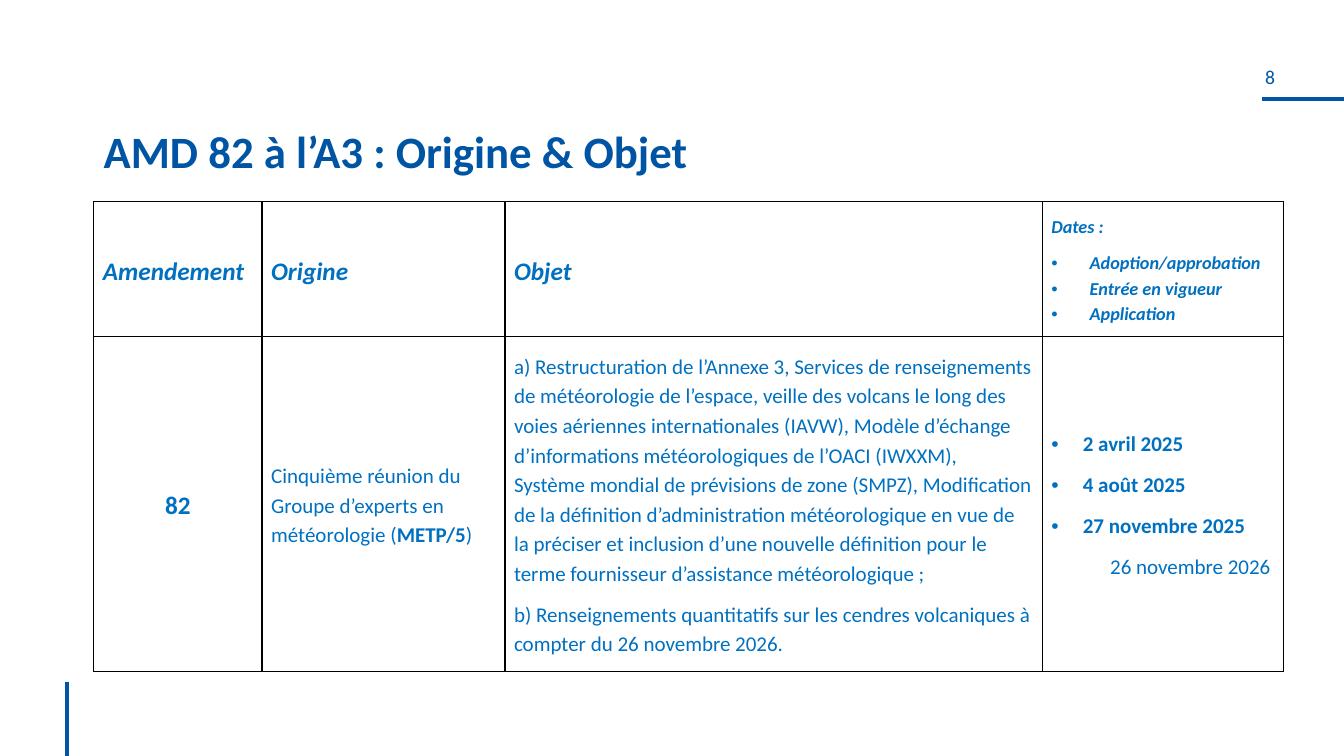
from lxml import etree
from pptx import Presentation
from pptx import util as u
from pptx.dml import color
from pptx.enum import shapes, text
from pptx.oxml import ns

COLORS = {"rule": "0055A5", "title": "0054A4", "table": "0070C0", "border": "000000"}
COLUMN_WIDTHS = [120.2, 173.5, 383.8, 172.1]
ROW_HEIGHTS = [96.5, 239]

HEADER_BULLET = {"margin": 27.4, "hanging": 27.4}
DATE_BULLET = {"margin": 22.5, "hanging": 22.5}

OBJECT_A = (
    "a) Restructuration de l’Annexe 3, Services de renseignements de météorologie de l’espace, "
    "veille des volcans le long des voies aériennes internationales (IAVW), Modèle d’échange "
    "d’informations météorologiques de l’OACI (IWXXM), Système mondial de prévisions de zone (SMPZ), "
    "Modification de la définition d’administration météorologique en vue de la préciser et inclusion "
    "d’une nouvelle définition pour le terme fournisseur d’assistance météorologique ;"
)
OBJECT_B = "b) Renseignements quantitatifs sur les cendres volcaniques à compter du 26 novembre 2026."


def entry(*runs, size=15, style="", after=8, centered=False, margin=0, hanging=0):
    runs = [run if isinstance(run, tuple) else (run, style) for run in runs]
    return {"runs": runs, "size": size, "after": after, "centered": centered,
            "margin": margin, "hanging": hanging}


CELLS = [
    [
        [entry("Amendement", size=18, style="bi")],
        [entry("Origine", size=18, style="bi")],
        [entry("Objet", size=18, style="bi")],
        [
            entry("Dates :", size=13, style="bi"),
            entry("Adoption/approbation", size=13, style="bi", after=0, **HEADER_BULLET),
            entry("Entrée en vigueur", size=13, style="bi", after=0, **HEADER_BULLET),
            entry("Application", size=13, style="bi", **HEADER_BULLET),
        ],
    ],
    [
        [entry("82", size=18, style="b", centered=True)],
        [entry("Cinquième réunion du Groupe d’experts en météorologie (", ("METP/5", "b"), ")")],
        [entry(OBJECT_A), entry(OBJECT_B)],
        [
            entry("2 avril 2025", style="b", **DATE_BULLET),
            entry("4 août 2025", style="b", **DATE_BULLET),
            entry("27 novembre 2025", style="b", **DATE_BULLET),
            entry("26 novembre 2026", margin=42),
        ],
    ],
]


def rgb(name):
    return color.RGBColor.from_string(COLORS[name])


def format_run(run, size, color_name, style=""):
    run.font.name = "Calibri"
    run.font.size = u.Pt(size)
    run.font.color.rgb = rgb(color_name)
    run.font.bold = "b" in style
    run.font.italic = "i" in style


def add_rule(slide, start, end):
    rule = slide.shapes.add_connector(
        shapes.MSO_CONNECTOR.STRAIGHT, *[u.Pt(value) for value in (*start, *end)])
    rule.line.color.rgb = rgb("rule")
    rule.line.width = u.Pt(3)
    etree.SubElement(rule._element.spPr, ns.qn("a:effectLst"))


def add_label(slide, box, label, size, color_name, style=""):
    shape = slide.shapes.add_textbox(*[u.Pt(value) for value in box])
    shape.text_frame.text = label
    paragraph = shape.text_frame.paragraphs[0]
    format_run(paragraph.runs[0], size, color_name, style)
    return shape.text_frame, paragraph


def add_page_number(slide, box):
    left, top, width, height = box
    frame, paragraph = add_label(slide, box, "8", 14, "rule")
    frame.margin_left = frame.margin_right = frame.margin_top = frame.margin_bottom = 0
    paragraph.alignment = text.PP_ALIGN.CENTER
    rule_y = top + height + 0.7
    add_rule(slide, (left + 37.4, rule_y), (960, rule_y))


def add_title(slide, box):
    frame, paragraph = add_label(slide, box, "AMD 82 à l’A3 : Origine & Objet", 32, "title", "b")
    frame.word_wrap = True
    frame.vertical_anchor = text.MSO_ANCHOR.MIDDLE
    paragraph.line_spacing = 0.9


def set_borders(cell):
    properties = cell._tc.get_or_add_tcPr()
    for side in ("lnL", "lnR", "lnT", "lnB"):
        line = etree.SubElement(properties, ns.qn(f"a:{side}"), w=str(u.Pt(1)))
        fill = etree.SubElement(line, ns.qn("a:solidFill"))
        etree.SubElement(fill, ns.qn("a:srgbClr"), val=COLORS["border"])


def fill_paragraph(paragraph, item):
    properties = paragraph._p.get_or_add_pPr()
    properties.set("marL", str(u.Pt(item["margin"])))
    properties.set("indent", str(u.Pt(-item["hanging"])))
    if item["hanging"]:
        etree.SubElement(properties, ns.qn("a:buFont"), typeface="Arial")
        etree.SubElement(properties, ns.qn("a:buChar"), char="•")
    paragraph.line_spacing = 1.15
    paragraph.space_after = u.Pt(item["after"])
    paragraph.alignment = text.PP_ALIGN.CENTER if item["centered"] else text.PP_ALIGN.LEFT
    for content, style in item["runs"]:
        run = paragraph.add_run()
        run.text = content
        format_run(run, item["size"], "table", style)


def fill_cell(cell, items):
    set_borders(cell)
    cell.fill.background()
    cell.vertical_anchor = text.MSO_ANCHOR.MIDDLE
    cell.margin_left = cell.margin_right = u.Pt(6.5)
    cell.margin_top = cell.margin_bottom = 0
    frame = cell.text_frame
    for index, item in enumerate(items):
        paragraph = frame.add_paragraph() if index else frame.paragraphs[0]
        fill_paragraph(paragraph, item)


def add_amendment_table(slide, left, top):
    table = slide.shapes.add_table(
        len(ROW_HEIGHTS), len(COLUMN_WIDTHS), u.Pt(left), u.Pt(top),
        u.Pt(sum(COLUMN_WIDTHS)), u.Pt(sum(ROW_HEIGHTS))).table
    table.first_row = table.horz_banding = False
    for column, width in zip(table.columns, COLUMN_WIDTHS):
        column.width = u.Pt(width)
    for row, height, contents in zip(table.rows, ROW_HEIGHTS, CELLS):
        row.height = u.Pt(height)
        for cell, items in zip(row.cells, contents):
            fill_cell(cell, items)


def main():
    presentation = Presentation()
    presentation.slide_width = u.Pt(960)
    presentation.slide_height = u.Pt(540)
    slide = presentation.slides.add_slide(presentation.slide_layouts[6])
    add_page_number(slide, (864, 46.1, 86.4, 23.8))
    add_rule(slide, (47.7, 487.5), (47.7, 540))
    add_title(slide, (67, 86.4, 849.6, 47.5))
    add_amendment_table(slide, 67, 144)
    presentation.save("out.pptx")


if __name__ == "__main__":
    main()
